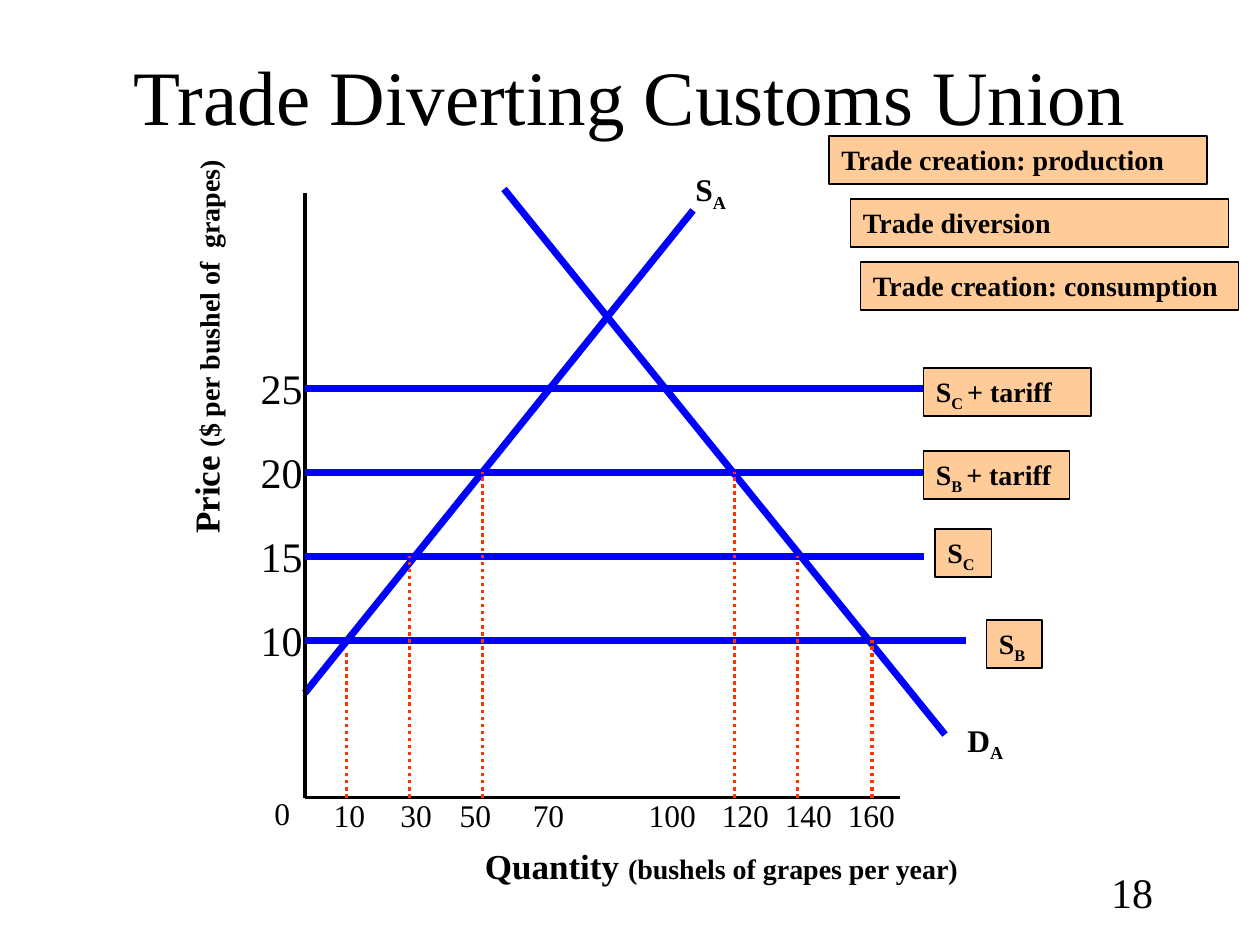
from lxml import etree
from pptx import Presentation
from pptx.dml.color import RGBColor
from pptx.enum.dml import MSO_LINE
from pptx.enum.shapes import MSO_CONNECTOR, MSO_SHAPE
from pptx.enum.text import MSO_ANCHOR, MSO_AUTO_SIZE, PP_ALIGN
from pptx.oxml.ns import qn
from pptx.util import Inches, Pt

COLORS = {"ink": "000000", "curve": "0000FF", "drop": "FF3300", "tag": "FFCC99"}
FONT = "Times New Roman"


def color(name):
    return RGBColor.from_string(COLORS[name])


def style(paragraph, size, bold=False, align=PP_ALIGN.LEFT):
    paragraph.alignment = align
    font = paragraph.font
    font.name, font.size, font.bold = FONT, Pt(size), bold
    font.color.rgb = color("ink")


def write(shape, text, size, bold=False, wrap=False, sub="", rest="", rest_size=None,
          align=PP_ALIGN.LEFT):
    frame = shape.text_frame
    frame.word_wrap = wrap
    frame.auto_size = MSO_AUTO_SIZE.SHAPE_TO_FIT_TEXT
    frame.vertical_anchor = MSO_ANCHOR.TOP
    paragraph = frame.paragraphs[0]
    style(paragraph, size, bold, align)
    paragraph.add_run().text = text
    if sub:
        subscript = paragraph.add_run()
        subscript.text = sub
        subscript._r.get_or_add_rPr().set("baseline", "-25000")
    if rest:
        ending = paragraph.add_run()
        ending.text = rest
        if rest_size:
            ending.font.size = Pt(rest_size)


def label(slide, box, text, size, **options):
    caption = slide.shapes.add_textbox(*map(Inches, box))
    write(caption, text, size, **options)
    return caption


def tag(slide, box, text, **options):
    plate = slide.shapes.add_shape(MSO_SHAPE.RECTANGLE, *map(Inches, box))
    plate.shadow.inherit = False
    plate.fill.solid()
    plate.fill.fore_color.rgb = color("tag")
    plate.line.color.rgb = color("ink")
    plate.line.width = Pt(1)
    write(plate, text, 16, bold=True, **options)


def segment(slide, start, end, shade, width, dash=None):
    stroke = slide.shapes.add_connector(
        MSO_CONNECTOR.STRAIGHT, *map(Inches, (*start, *end)))
    stroke.line.color.rgb = color(shade)
    stroke.line.width = Pt(width)
    if dash:
        stroke.line.dash_style = dash
    etree.SubElement(stroke._element.spPr, qn("a:effectLst"))


def add_title(slide, box):
    title = slide.shapes.title
    title.left, title.top, title.width, title.height = map(Inches, box)
    title.text_frame.text = "Trade Diverting Customs Union"
    title.text_frame.vertical_anchor = MSO_ANCHOR.MIDDLE
    style(title.text_frame.paragraphs[0], 44, align=PP_ALIGN.CENTER)


def add_market_diagram(slide, box):
    left, top, width, height = box
    right, bottom = left + width, top + height

    def price_y(price):
        return bottom - 1.25 - (price - 10) * 2 / 15

    segment(slide, (left, bottom - 0.83), (left + 3.08, top + 0.17), "curve", 4)
    segment(slide, (left, top + 0.03), (left, bottom), "ink", 2)
    segment(slide, (left, bottom), (right, bottom), "ink", 2)
    segment(slide, (left + 1.58, top), (left + 5.08, bottom - 0.5), "curve", 4)

    for price, reach in ((10, 5.25), (15, 4.91), (20, 4.91), (25, 4.91)):
        y = price_y(price)
        segment(slide, (left, y), (left + reach, y), "curve", 4)
        label(slide, (left - 0.45, y - 0.25, 0.53, 0.5), str(price), 24)

    drops = ((0.33, 5.17), (0.83, price_y(15)), (1.41, price_y(20)),
             (3.41, price_y(20)), (3.91, price_y(15)), (4.5, price_y(10)))
    for offset, y in drops:
        segment(slide, (left + offset, bottom), (left + offset, y), "drop", 2,
                MSO_LINE.ROUND_DOT)

    label(slide, (left - 0.34, bottom - 0.08, 0.33, 0.4), "0", 18)
    quantities = ((10, 0.13), (30, 0.66), (50, 1.13), (70, 1.71),
                  (100, 2.63), (120, 3.21), (140, 3.71), (160, 4.21))
    for quantity, offset in quantities:
        label_width = 0.45 if quantity < 100 else 0.58
        label(slide, (left + offset, bottom - 0.06, label_width, 0.4), str(quantity), 18)

    label(slide, (left + 3, top - 0.2, 0.58, 0.7), "S", 18, bold=True, wrap=True, sub="A")
    label(slide, (left + 5.16, bottom - 0.66, 0.5, 0.4), "D", 18, bold=True, sub="A")
    label(slide, (left + 1.33, bottom + 0.32, 3.96, 0.43), "Quantity ", 20, bold=True,
          rest="(bushels of grapes per year)", rest_size=16)
    price_title = label(slide, (left - 2.38, top + 1.03, 3.18, 0.43), "Price ", 20,
                        bold=True, rest="($ per bushel of  grapes)", rest_size=16)
    price_title.rotation = 270


def add_supply_tags(slide, box):
    left, top, width, height = box
    tag(slide, (left, top, width, height), "S", wrap=True, sub="C ", rest="+ tariff")
    tag(slide, (left, top + 0.66, 1.16, height), "S", sub="B ", rest="+ tariff")
    tag(slide, (left + 0.09, top + 1.28, 0.45, height), "S", sub="C")
    tag(slide, (left + 0.5, top + 2, 0.44, height), "S", sub="B")


def add_effect_tags(slide, box):
    left, top, width, height = box
    effects = (("Trade creation: production", 0), ("Trade diversion", 0.17),
               ("Trade creation: consumption", 0.25))
    for row, (effect, shift) in enumerate(effects):
        tag(slide, (left + shift, top + row * 0.5, width, height), effect, wrap=True)


def add_page_number(slide, box):
    label(slide, box, "18", 24, wrap=True, align=PP_ALIGN.RIGHT)


def main():
    deck = Presentation()
    deck.slide_width, deck.slide_height = Inches(10), Inches(7.5)
    slide = deck.slides.add_slide(deck.slide_layouts[5])
    add_title(slide, (0.75, 0, 8.5, 1.5))
    add_market_diagram(slide, (2.42, 1.5, 4.72, 4.83))
    add_supply_tags(slide, (7.33, 2.92, 1.33, 0.38))
    add_effect_tags(slide, (6.58, 1.08, 3, 0.38))
    add_page_number(slide, (7.17, 6.83, 2.08, 0.5))
    deck.save("out.pptx")


if __name__ == "__main__":
    main()
